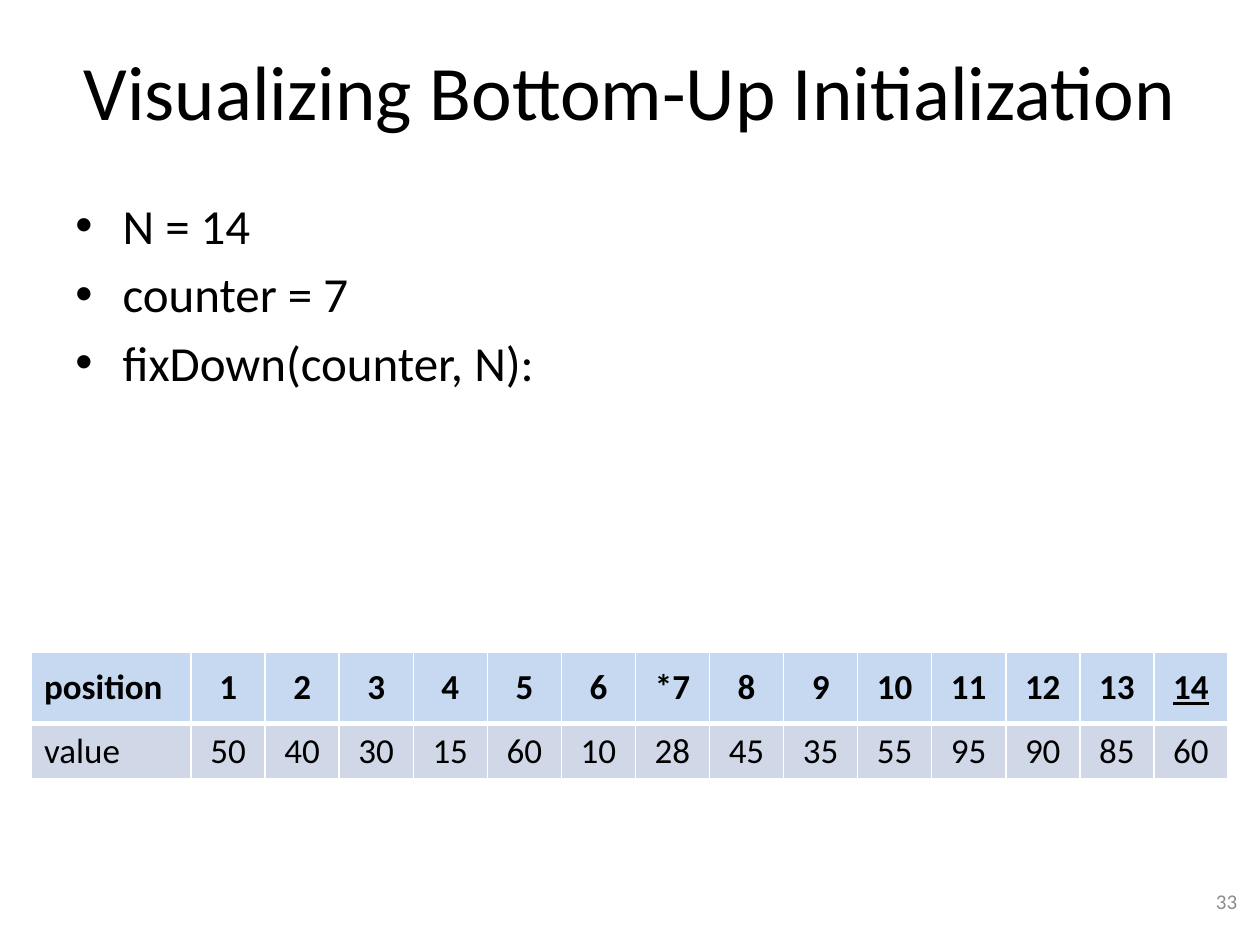
from typing import NamedTuple

from lxml import etree
from pptx import Presentation
from pptx.dml.color import RGBColor
from pptx.enum import text
from pptx.oxml import ns
from pptx.util import Pt

FONT = "Calibri"
BLACK, GREY, WHITE = "000000", "8C8C8C", "FFFFFF"


class Box(NamedTuple):
    left: float
    top: float
    width: float
    height: float

    def lengths(self) -> list:
        return [Pt(v) for v in self]


class TableRow(NamedTuple):
    label: str
    entries: list
    height: float
    fill: str
    bold: bool
    top_line: float
    bottom_line: float


POSITIONS = [str(n) for n in range(1, 15)]
POSITIONS[6] = "*7"
VALUES = "50 40 30 15 60 10 28 45 35 55 95 90 85 60".split()
ROWS = [
    TableRow("position", POSITIONS, 41, "C6D9F1", True, 1, 3),
    TableRow("value", VALUES, 31.6, "D0D8E8", False, 3, 1),
]
LABEL_WIDTH, ENTRY_WIDTH = 91.2, 42.34
TABLE_BOX = Box(18, 372.5, 684, sum(row.height for row in ROWS))
STATE = ["N = 14", "counter = 7", "fixDown(counter, N):"]


def rgb(hex_color: str) -> RGBColor:
    return RGBColor.from_string(hex_color)


def format_text(p, size: float, color: str = BLACK, bold: bool = False,
                align=text.PP_ALIGN.LEFT) -> None:
    p.alignment = align
    for r in p.runs:
        r.font.name, r.font.size, r.font.bold = FONT, Pt(size), bold
        r.font.color.rgb = rgb(color)


def place(sp, box: Box) -> None:
    sp.left, sp.top, sp.width, sp.height = box.lengths()


def add_text(s, box: Box, content: str, anchor):
    """Add a wrapping text box and return its text frame."""
    tf = s.shapes.add_textbox(*box.lengths()).text_frame
    tf.word_wrap = True
    tf.vertical_anchor = anchor
    tf.text = content
    return tf


def add_bullet(p, indent: float) -> None:
    pPr = p._p.get_or_add_pPr()
    pPr.set("marL", str(Pt(indent)))
    pPr.set("indent", str(-Pt(indent)))
    etree.SubElement(pPr, ns.qn("a:buFont")).set("typeface", "Arial")
    etree.SubElement(pPr, ns.qn("a:buChar")).set("char", "•")


def set_borders(cell, top: float, bottom: float) -> None:
    """Draw white cell borders; the side lines are 1 pt wide."""
    tcPr = cell._tc.get_or_add_tcPr()
    widths = {"lnL": 1, "lnR": 1, "lnT": top, "lnB": bottom}
    for i, (tag, width) in enumerate(widths.items()):
        ln = etree.Element(ns.qn(f"a:{tag}"), w=str(Pt(width)))
        fill = etree.SubElement(ln, ns.qn("a:solidFill"))
        etree.SubElement(fill, ns.qn("a:srgbClr")).set("val", WHITE)
        tcPr.insert(i, ln)


def add_heap_table(s) -> None:
    table = s.shapes.add_table(len(ROWS), len(POSITIONS) + 1,
                               *TABLE_BOX.lengths()).table
    for i, column in enumerate(table.columns):
        column.width = Pt(ENTRY_WIDTH if i else LABEL_WIDTH)
    for i, row in enumerate(ROWS):
        table.rows[i].height = Pt(row.height)
        for j, entry in enumerate([row.label, *row.entries]):
            cell = table.cell(i, j)
            cell.text = entry
            cell.vertical_anchor = text.MSO_ANCHOR.MIDDLE
            cell.fill.solid()
            cell.fill.fore_color.rgb = rgb(row.fill)
            align = text.PP_ALIGN.CENTER if j else text.PP_ALIGN.LEFT
            format_text(cell.text_frame.paragraphs[0], 20, bold=row.bold, align=align)
            set_borders(cell, row.top_line, row.bottom_line)
    last_position = table.cell(0, len(POSITIONS)).text_frame.paragraphs[0]
    last_position.runs[0].font.underline = True


def main() -> None:
    prs = Presentation()
    prs.slide_width, prs.slide_height = Pt(720), Pt(540)
    s = prs.slides.add_slide(prs.slide_layouts[5])

    title = s.shapes.title
    place(title, Box(36, 6, 648, 90))
    title.text_frame.text = "Visualizing Bottom-Up Initialization"
    title.text_frame.vertical_anchor = text.MSO_ANCHOR.MIDDLE
    format_text(title.text_frame.paragraphs[0], 44, align=text.PP_ALIGN.CENTER)

    tf = add_text(s, Box(36, 108, 648, 186), "\n".join(STATE), text.MSO_ANCHOR.TOP)
    for p in tf.paragraphs:
        format_text(p, 28)
        p.space_before = Pt(5.6)
        add_bullet(p, 27)

    tf = add_text(s, Box(546, 500.5, 168, 28.75), "33", text.MSO_ANCHOR.MIDDLE)
    format_text(tf.paragraphs[0], 12, GREY, align=text.PP_ALIGN.RIGHT)

    add_heap_table(s)
    prs.save("out.pptx")


if __name__ == "__main__":
    main()
